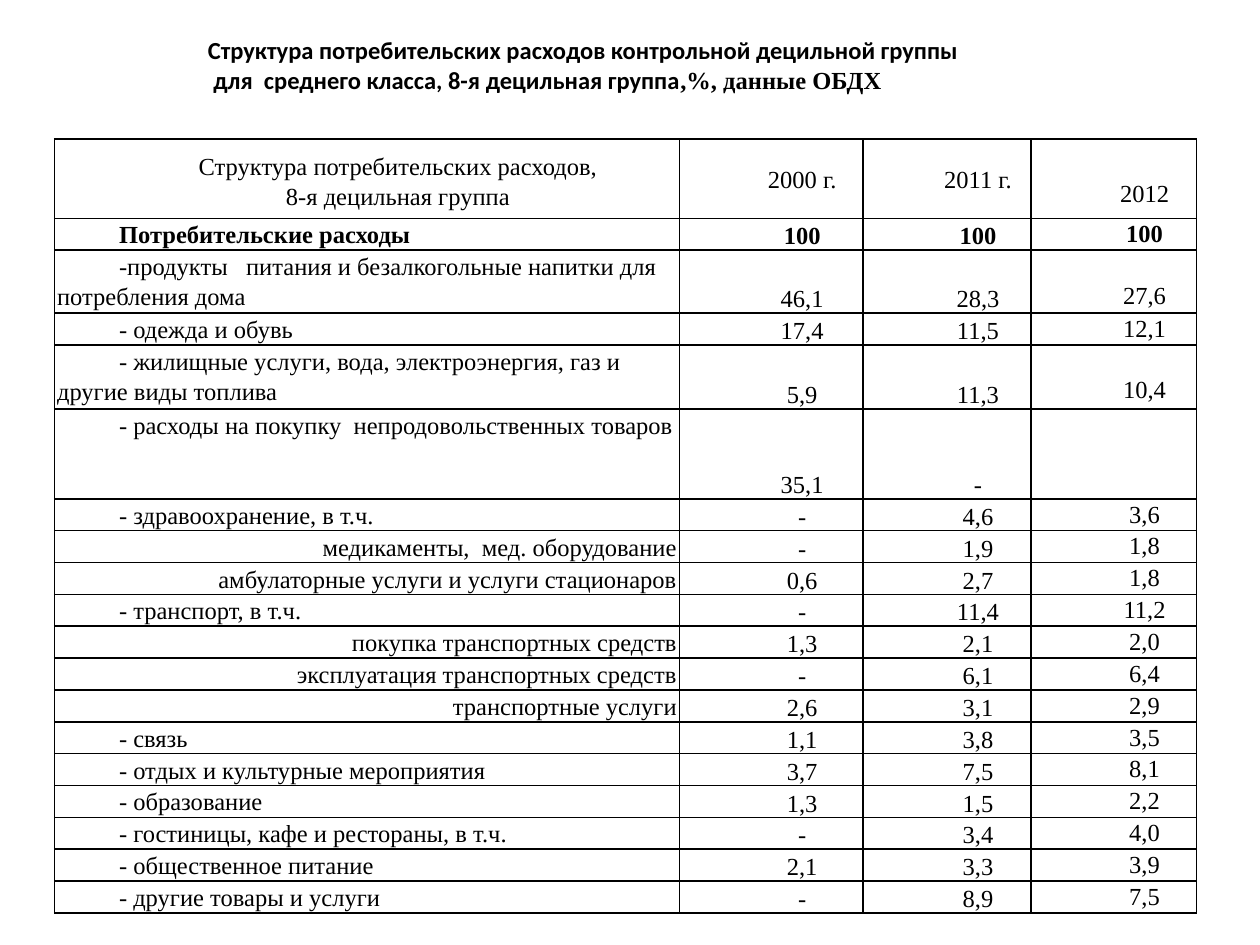
from dataclasses import dataclass

from lxml.etree import SubElement
from pptx import Presentation
from pptx.dml.color import RGBColor
from pptx.enum.text import MSO_ANCHOR, PP_ALIGN
from pptx.oxml.ns import qn
from pptx.util import Pt

INK, PAPER = "000000", "FFFFFF"
SERIF, SANS = "Times New Roman", "Calibri"
LINE = Pt(16.9)
ROW_HEIGHT = 18.2
COLUMN_WIDTHS = (357, 105, 95.9, 94.5)
LEFT, CENTER, RIGHT = PP_ALIGN.LEFT, PP_ALIGN.CENTER, PP_ALIGN.RIGHT
TOP, MIDDLE, BOTTOM = MSO_ANCHOR.TOP, MSO_ANCHOR.MIDDLE, MSO_ANCHOR.BOTTOM


@dataclass
class Row:
    label: str
    values: tuple[str, str, str]
    align: PP_ALIGN = LEFT
    height: float = ROW_HEIGHT
    bold: bool = False


HEADER = Row("Структура потребительских расходов,\n8-я децильная группа",
             ("2000 г.", "2011 г.", "2012"), CENTER, 45.4)
ROWS = [
    Row("Потребительские расходы", ("100", "100", "100"), bold=True),
    Row("-продукты   питания и безалкогольные напитки для потребления дома",
        ("46,1", "28,3", "27,6"), height=36),
    Row("- одежда и обувь", ("17,4", "11,5", "12,1")),
    Row("- жилищные услуги, вода, электроэнергия, газ и другие виды топлива",
        ("5,9", "11,3", "10,4"), height=36.5),
    Row("- расходы на покупку  непродовольственных товаров",
        ("35,1", "-", ""), height=51.4),
    Row("- здравоохранение, в т.ч.", ("-", "4,6", "3,6")),
    Row("медикаменты,  мед. оборудование", ("-", "1,9", "1,8"), RIGHT),
    Row("амбулаторные услуги и услуги стационаров", ("0,6", "2,7", "1,8"), RIGHT),
    Row("- транспорт, в т.ч.", ("-", "11,4", "11,2")),
    Row("покупка транспортных средств", ("1,3", "2,1", "2,0"), RIGHT),
    Row("эксплуатация транспортных средств", ("-", "6,1", "6,4"), RIGHT),
    Row("транспортные услуги", ("2,6", "3,1", "2,9"), RIGHT),
    Row("- связь", ("1,1", "3,8", "3,5")),
    Row("- отдых и культурные мероприятия", ("3,7", "7,5", "8,1")),
    Row("- образование", ("1,3", "1,5", "2,2")),
    Row("- гостиницы, кафе и рестораны, в т.ч.", ("-", "3,4", "4,0")),
    Row("- общественное питание", ("2,1", "3,3", "3,9")),
    Row("- другие товары и услуги", ("-", "8,9", "7,5")),
]


def color(value: str) -> RGBColor:
    return RGBColor.from_string(value)


def apply(target, values: dict) -> None:
    for name, value in values.items():
        setattr(target, name, value)


def add_run(p, text: str, font: str, bold: bool) -> None:
    r = p.add_run()
    r.text = text
    apply(r.font, {"name": font, "size": Pt(14), "bold": bold})
    r.font.color.rgb = color(INK)


def indent(p) -> None:
    pPr = p._p.get_or_add_pPr()
    pPr.set("marL", "0")
    pPr.set("indent", str(int(Pt(35.4))))


def add_borders(cell) -> None:
    tcPr = cell._tc.get_or_add_tcPr()
    for i, side in enumerate(("lnL", "lnR", "lnT", "lnB")):
        ln = SubElement(tcPr, qn(f"a:{side}"), w=str(int(Pt(1))))
        fill = SubElement(ln, qn("a:solidFill"))
        SubElement(fill, qn("a:srgbClr"), val=INK)
        tcPr.insert(i, ln)


def fill_cell(cell, text: str, align: PP_ALIGN, bold: bool, layout: dict) -> None:
    cell.fill.solid()
    cell.fill.fore_color.rgb = color(PAPER)
    add_borders(cell)
    apply(cell, layout)
    lines = text.split("\n")
    for i, line in enumerate(lines):
        p = cell.text_frame.add_paragraph() if i else cell.text_frame.paragraphs[0]
        first_of_many = i == 0 and len(lines) > 1
        apply(p, {"alignment": align, "line_spacing": 1.5 if first_of_many else LINE})
        indent(p)
        if line:
            add_run(p, line, SERIF, bold)


def cell_layout(row: Row, column: int) -> dict:
    last = column == 3
    side = Pt(0 if last else 1.4)
    layout = {"margin_left": side, "margin_right": side,
              "margin_top": Pt(0 if last else 0.7), "margin_bottom": Pt(0)}
    if column == 0:
        anchor = TOP
    elif last:
        tall = row.height > ROW_HEIGHT
        anchor = BOTTOM if tall else TOP
        if tall:
            slack = row.height - 2 * LINE.pt
            layout["margin_bottom"] = Pt(slack / 2 if row is HEADER else slack)
    else:
        anchor = MIDDLE if row is HEADER else BOTTOM
    return layout | {"vertical_anchor": anchor}


def add_spending_table(s, rows: list[Row]) -> None:
    frame = s.shapes.add_table(len(rows), len(COLUMN_WIDTHS), Pt(31.2), Pt(79.4),
                               Pt(sum(COLUMN_WIDTHS)), Pt(sum(r.height for r in rows)))
    table = frame.table
    apply(table, {"first_row": False, "horz_banding": False})
    for column, width in zip(table.columns, COLUMN_WIDTHS):
        column.width = Pt(width)
    for i, row in enumerate(rows):
        table.rows[i].height = Pt(row.height)
        for j, text in enumerate((row.label, *row.values)):
            fill_cell(table.cell(i, j), text, CENTER if j else row.align,
                      row.bold, cell_layout(row, j))


def add_title(s) -> None:
    sp = s.shapes.add_textbox(Pt(76.3), Pt(16.6), Pt(550), Pt(63.4))
    tf = sp.text_frame
    apply(tf, {"word_wrap": True, "vertical_anchor": TOP})
    lines = (
        [("Структура потребительских расходов контрольной децильной группы", SANS)],
        [(" для  среднего класса, 8-я децильная группа", SANS),
         (",%, данные ОБДХ", SERIF)],
    )
    for i, runs in enumerate(lines):
        p = tf.add_paragraph() if i else tf.paragraphs[0]
        indent(p)
        for text, font in runs:
            add_run(p, text, font, True)


def main() -> None:
    prs = Presentation()
    apply(prs, {"slide_width": Pt(720), "slide_height": Pt(540)})
    s = prs.slides.add_slide(prs.slide_layouts[6])
    add_spending_table(s, [HEADER, *ROWS])
    add_title(s)
    prs.save("out.pptx")


if __name__ == "__main__":
    main()
